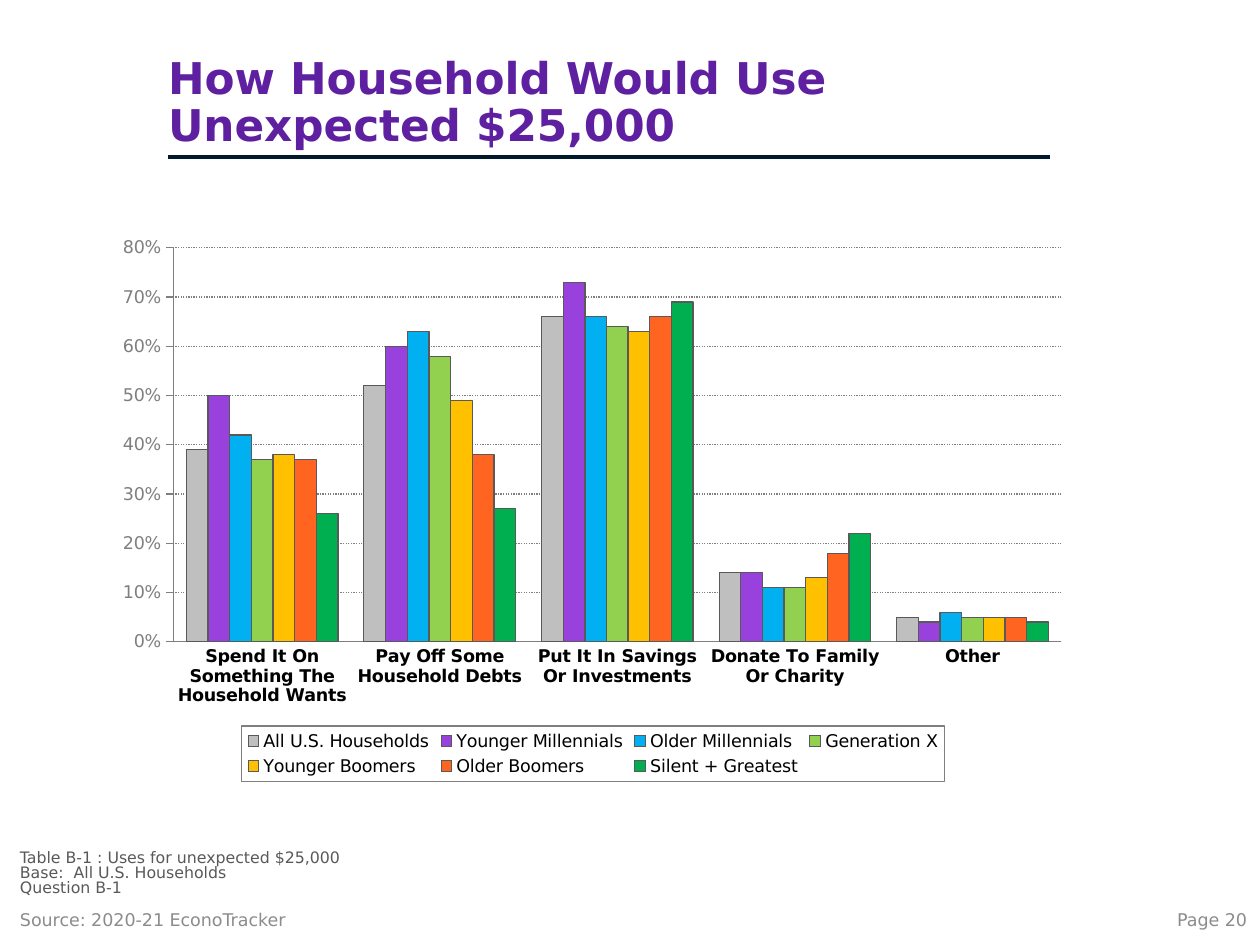
from lxml import etree
from pptx import Presentation
from pptx.chart.data import CategoryChartData
from pptx.dml.color import RGBColor
from pptx.enum.chart import XL_CHART_TYPE, XL_LEGEND_POSITION, XL_TICK_MARK
from pptx.enum.dml import MSO_LINE
from pptx.enum.shapes import MSO_CONNECTOR
from pptx.enum.text import MSO_ANCHOR, MSO_AUTO_SIZE, PP_ALIGN
from pptx.oxml import parse_xml
from pptx.oxml.ns import nsdecls, qn
from pptx.util import Pt

COLUMN = XL_CHART_TYPE.COLUMN_CLUSTERED
BELOW = XL_LEGEND_POSITION.BOTTOM
NO_TICK, OUT_TICK = XL_TICK_MARK.NONE, XL_TICK_MARK.OUTSIDE
DOTTED = MSO_LINE.ROUND_DOT
STRAIGHT = MSO_CONNECTOR.STRAIGHT
MIDDLE, BOTTOM = MSO_ANCHOR.MIDDLE, MSO_ANCHOR.BOTTOM
LEFT, RIGHT = PP_ALIGN.LEFT, PP_ALIGN.RIGHT
NO_FIT = MSO_AUTO_SIZE.NONE

FONT = "DejaVu Sans"
NAVY = RGBColor(0x00, 0x19, 0x2F)
PURPLE = RGBColor(0x5E, 0x20, 0xA0)
BLACK = RGBColor(0x00, 0x00, 0x00)
DARK = RGBColor(0x59, 0x59, 0x59)
GRAY = RGBColor(0x7F, 0x7F, 0x7F)
PALE = RGBColor(0x8C, 0x8C, 0x8C)
SILVER = RGBColor(0xBF, 0xBF, 0xBF)
VIOLET = RGBColor(0x99, 0x41, 0xDD)
BLUE = RGBColor(0x00, 0xB0, 0xF0)
LIME = RGBColor(0x92, 0xD0, 0x50)
GOLD = RGBColor(0xFF, 0xC0, 0x00)
ORANGE = RGBColor(0xFF, 0x65, 0x21)
GREEN = RGBColor(0x00, 0xB0, 0x50)

WIDE, HIGH = 1260, 945
SCALE = 914400 / 126

USES = ["Spend It On Something The Household Wants",
        "Pay Off Some Household Debts",
        "Put It In Savings Or Investments",
        "Donate To Family Or Charity", "Other"]
GROUPS = [
    ("All U.S. Households", SILVER, (0.39, 0.52, 0.66, 0.14, 0.05)),
    ("Younger Millennials", VIOLET, (0.5, 0.6, 0.73, 0.14, 0.04)),
    ("Older Millennials", BLUE, (0.42, 0.63, 0.66, 0.11, 0.06)),
    ("Generation X", LIME, (0.37, 0.58, 0.64, 0.11, 0.05)),
    ("Younger Boomers", GOLD, (0.38, 0.49, 0.63, 0.13, 0.05)),
    ("Older Boomers", ORANGE, (0.37, 0.38, 0.66, 0.18, 0.05)),
    ("Silent + Greatest", GREEN, (0.26, 0.27, 0.69, 0.22, 0.04)),
]


def px(*nums):
    return [round(n * SCALE) for n in nums]


def style(font, size, color, bold=False):
    font.name, font.size, font.bold = FONT, Pt(size), bold
    font.color.rgb = color


def stroke(line, color, width):
    line.color.rgb = color
    line.width = Pt(width)


def write(shape, text, size=10, color=PALE, bold=False, align=LEFT,
          anchor=MIDDLE, space=1.0, pads=(13, 6, 13, 6)):
    frame = shape.text_frame
    frame.word_wrap = True
    frame.auto_size = NO_FIT
    frame.vertical_anchor = anchor
    (frame.margin_left, frame.margin_top,
     frame.margin_right, frame.margin_bottom) = px(*pads)
    frame.text = text
    for para in frame.paragraphs:
        para.alignment = align
        para.line_spacing = space
        style(para.font, size, color, bold)


def add_head(slide, x, y, w, h):
    # Title with a rule along its foot
    title = slide.shapes.title
    title.left, title.top, title.width, title.height = px(x, y, w, h)
    write(title, "How Household Would Use Unexpected $25,000", size=25,
          color=PURPLE, bold=True, anchor=BOTTOM, space=0.9,
          pads=(0, 6, 0, 6))
    rule = slide.shapes.add_connector(STRAIGHT, *px(x, y + h, x + w, y + h))
    stroke(rule.line, NAVY, 2)
    etree.SubElement(rule._element.spPr, qn("a:effectLst"))


def set_place(parent, spot, x, y, w, h, inner=False):
    # Manual layout, as shares of the chart's box
    for old in parent.findall(qn("c:layout")):
        parent.remove(old)
    layout = etree.Element(qn("c:layout"))
    manual = etree.SubElement(layout, qn("c:manualLayout"))
    pairs = [("layoutTarget", "inner")] if inner else []
    pairs += [("xMode", "edge"), ("yMode", "edge"),
              ("x", x), ("y", y), ("w", w), ("h", h)]
    for tag, val in pairs:
        etree.SubElement(manual, qn("c:" + tag)).set("val", str(val))
    parent.insert(spot, layout)


def add_bars(slide, x, y, w, h):
    data = CategoryChartData(number_format="0%")
    data.categories = USES
    for name, _, vals in GROUPS:
        data.add_series(name, vals)
    chart = slide.shapes.add_chart(COLUMN, *px(x, y, w, h), data).chart
    chart.has_title = False
    style(chart.font, 10, BLACK)
    set_place(chart._chartSpace.chart.plotArea, 0,
              0.07, 0.036, 0.91, 0.712, inner=True)

    # Bars
    plot = chart.plots[0]
    plot.gap_width, plot.overlap = 120, 0
    plot.vary_by_categories = False
    for bars, (_, color, _) in zip(plot.series, GROUPS):
        bars.format.fill.solid()
        bars.format.fill.fore_color.rgb = color
        bars.invert_if_negative = False
        stroke(bars.format.line, DARK, 0.5 if color == SILVER else 0.75)

    # Axes and grid
    cats, vals = chart.category_axis, chart.value_axis
    for axis, tick, color in ((cats, NO_TICK, BLACK), (vals, OUT_TICK, GRAY)):
        axis.major_tick_mark, axis.minor_tick_mark = tick, NO_TICK
        stroke(axis.format.line, GRAY, 0.75)
        style(axis.tick_labels.font, 10, color, bold=axis is cats)
    vals.minimum_scale, vals.maximum_scale, vals.major_unit = 0, 0.8, 0.1
    vals.tick_labels.number_format = "0%"
    vals.tick_labels.number_format_is_linked = False
    vals.has_major_gridlines = True
    grid = vals.major_gridlines.format.line
    stroke(grid, GRAY, 0.75)
    grid.dash_style = DOTTED

    # Legend with a thin frame
    chart.has_legend = True
    key = chart.legend
    key.position = BELOW
    key.include_in_layout = False
    style(key.font, 10, BLACK)
    node = key._element
    set_place(node, 1, 0.14, 0.9, 0.72, 0.1)
    frame = parse_xml(
        f'<c:spPr {nsdecls("c", "a")}><a:ln w="9525"><a:solidFill>'
        f'<a:srgbClr val="{GRAY}"/></a:solidFill></a:ln></c:spPr>')
    node.find(qn("c:txPr")).addprevious(frame)


def add_foot(slide, x, y, w, h):
    # Table notes, then the source and page line
    def put(left, top, wide, high, text, **form):
        box = slide.shapes.add_textbox(*px(x + left, y + top, wide, high))
        write(box, text, **form)

    put(20, 0, w - 40, 45,
        "Table B-1 : Uses for unexpected $25,000\n"
        "Base:  All U.S. Households\nQuestion B-1",
        size=9, color=DARK, anchor=BOTTOM, space=0.8, pads=(0, 0, 0, 0))
    put(7, h - 50, 420, 50, "Source: 2020-21 EconoTracker")
    put(w - 284, h - 50, 284, 50, "Page 20", align=RIGHT)


def main():
    deck = Presentation()
    deck.slide_width, deck.slide_height = px(WIDE, HIGH)
    slide = deck.slides.add_slide(deck.slide_layouts[5])
    add_head(slide, 168, 50, 882, 107)
    add_bars(slide, 105, 228, 976, 554)
    add_foot(slide, 0, 852, WIDE, HIGH - 852)
    deck.save("out.pptx")


if __name__ == "__main__":
    main()
